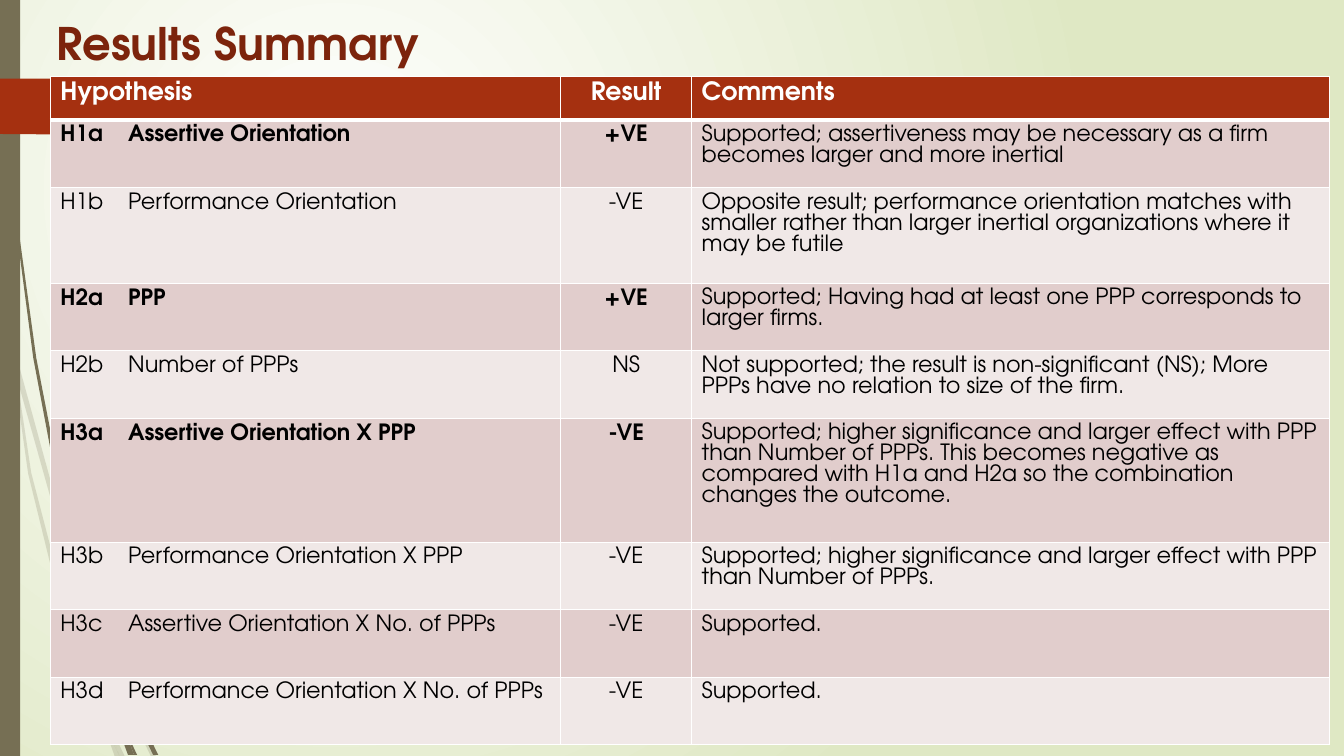
import pptx
import pptx.util
import pptx.dml.color
import pptx.enum.shapes
import pptx.enum.text
import pptx.oxml
from pptx.oxml.ns import qn

Inches, Pt = pptx.util.Inches, pptx.util.Pt
RGBColor = pptx.dml.color.RGBColor
PP_ALIGN = pptx.enum.text.PP_ALIGN

WHITE = RGBColor(0xFF, 0xFF, 0xFF)
BLACK = RGBColor(0, 0, 0)
PALE_GREEN = RGBColor(0xDF, 0xE8, 0xC4)
OLIVE = RGBColor(0x76, 0x6F, 0x54)
RUST = RGBColor(0xA5, 0x30, 0x10)
DARK_RUST = RGBColor(0x7C, 0x24, 0x0C)
ROSE = RGBColor(0xE1, 0xCD, 0xCC)
LIGHT_ROSE = RGBColor(0xF0, 0xE8, 0xE7)

# Outlines of the grass blades, in hundredths of an inch
FAINT_BLADES = [
    [(11, 350), (9, 322), (0, 282), (0, 299), (10, 344)],
    [(58, 522), (84, 599), (85, 586), (62, 520), (14, 345), (17, 376)],
    [(92, 607), (88, 596), (88, 610), (123, 694), (150, 751), (155, 751), (127, 692)],
    [(119, 751), (124, 751), (105, 711)],
    [(93, 683), (70, 619), (31, 469), (17, 376), (11, 350), (28, 470), (65, 621),
     (92, 693), (101, 714), (99, 707)],
    [(84, 599), (87, 646), (93, 683), (96, 692), (105, 711), (103, 706), (91, 646),
     (88, 610), (88, 608)],
    [(88, 584), (110, 462), (160, 349), (229, 245), (268, 198), (290, 175), (312, 154),
     (312, 153), (289, 175), (268, 197), (228, 244), (158, 348), (107, 461), (85, 584),
     (85, 586), (88, 596)],
    [(101, 714), (114, 751), (119, 751)],
    [(88, 608), (88, 610), (88, 596), (85, 586), (84, 599)],
    [(96, 692), (93, 683), (99, 707), (101, 714), (119, 751), (105, 711)],
]
SOLID_BLADES = [
    [(7, 110), (17, 233), (33, 355), (56, 477), (57, 481), (55, 457), (55, 453),
     (36, 355), (19, 232), (8, 109), (5, 48), (4, 0), (3, 0), (4, 48)],
    [(88, 592), (106, 645), (106, 633), (106, 631), (93, 590), (60, 472), (64, 505)],
    [(113, 649), (110, 641), (111, 656), (132, 708), (152, 749), (157, 749), (136, 706)],
    [(110, 691), (98, 657), (72, 556), (64, 505), (57, 477), (68, 557), (93, 659),
     (111, 708), (117, 722), (116, 717)],
    [(60, 472), (58, 453), (54, 349), (58, 245), (63, 193), (70, 141), (62, 193),
     (56, 245), (52, 349), (55, 449)],
    [(133, 749), (136, 749), (122, 719)],
    [(57, 477), (64, 505), (60, 472), (55, 449), (55, 453)],
    [(111, 633), (125, 552), (158, 476), (205, 406), (231, 374), (245, 359), (261, 344),
     (260, 344), (245, 358), (231, 373), (204, 405), (156, 474), (122, 551), (106, 631),
     (110, 641)],
    [(117, 722), (127, 749), (131, 749)],
    [(106, 645), (110, 691), (116, 706), (122, 719), (121, 716), (111, 656), (109, 651)],
    [(106, 645), (109, 651), (111, 656), (110, 641), (106, 631), (106, 633)],
    [(116, 706), (110, 691), (116, 717), (117, 722), (130, 749), (133, 749), (122, 719)],
]
TAG = [(173, 108), (148, 133), (146, 134), (136, 134), (0, 133), (0, 78), (146, 78),
       (148, 79), (173, 104)]

COLUMN_WIDTHS = [5.06, 1.3, 6.33]
ROW_HEIGHTS = [0.43, 0.67, 0.95, 0.67, 0.67, 1.23, 0.67, 0.67, 0.67]
HEADER = ("Hypothesis", "Result", "Comments")
# Label and name, result, comment, emphasised
HYPOTHESES = [
    ("H1a\tAssertive Orientation", "+VE",
     "Supported; assertiveness may be necessary as a firm becomes larger and more inertial", True),
    ("H1b\tPerformance Orientation", "-VE",
     "Opposite result; performance orientation matches with smaller rather than larger "
     "inertial organizations where it may be futile", False),
    ("H2a\tPPP", "+VE",
     "Supported; Having had at least one PPP corresponds to larger firms.", True),
    ("H2b\tNumber of PPPs", "NS",
     "Not supported; the result is non-significant (NS); More PPPs have no relation to "
     "size of the firm.", False),
    ("H3a\tAssertive Orientation X PPP", "-VE",
     "Supported; higher significance and larger effect with PPP than Number of PPPs. This "
     "becomes negative as compared with H1a and H2a so the combination changes the outcome.", True),
    ("H3b\tPerformance Orientation X PPP", "-VE",
     "Supported; higher significance and larger effect with PPP than Number of PPPs.", False),
    ("H3c\tAssertive Orientation X No. of PPPs", "-VE", "Supported.", False),
    ("H3d\tPerformance Orientation X No. of PPPs", "-VE", "Supported.", False),
]


class SlideBuilder:
    font_name = "TeX Gyre Adventor"

    def __init__(self, slide):
        self.slide = slide

    def background(self, inner, outer):
        fill = self.slide.background.fill
        fill.gradient()
        for stop, color in zip(fill.gradient_stops, (inner, outer)):
            stop.color.rgb = color
        gradient = self.slide._element.find(".//" + qn("a:gradFill"))
        gradient.replace(gradient.find(qn("a:lin")), pptx.oxml.parse_xml(
            f'<a:path xmlns:a="{gradient.nsmap["a"]}" path="circle">'
            '<a:fillToRect l="50000" t="50000" r="100000" b="100000"/></a:path>'))

    def paint(self, shape, color, opacity=100):
        shape.shadow.inherit = False
        shape.fill.solid()
        shape.fill.fore_color.rgb = color
        shape.line.fill.background()
        if opacity < 100:
            rgb = shape._element.spPr.find(qn("a:solidFill"))[0]
            rgb.append(rgb.makeelement(qn("a:alpha"), {"val": str(opacity * 1000)}))

    def outline(self, points, color, opacity=100):
        builder = self.slide.shapes.build_freeform(*points[0], scale=Inches(0.01))
        builder.add_line_segments(points[1:])
        self.paint(builder.convert_to_shape(), color, opacity)

    def rectangle(self, left, top, width, height, color):
        shape = self.slide.shapes.add_shape(
            pptx.enum.shapes.MSO_SHAPE.RECTANGLE,
            Inches(left), Inches(top), Inches(width), Inches(height))
        self.paint(shape, color)

    def style(self, paragraph, size, color, bold, alignment=PP_ALIGN.LEFT):
        paragraph.alignment = alignment
        font = paragraph.font
        font.name, font.size, font.bold = self.font_name, Pt(size), bold
        font.color.rgb = color

    def title(self, text, left, top, width, height):
        shape = self.slide.shapes.title
        shape.left, shape.top = Inches(left), Inches(top)
        shape.width, shape.height = Inches(width), Inches(height)
        shape.text_frame.text = text
        shape.text_frame.vertical_anchor = pptx.enum.text.MSO_ANCHOR.MIDDLE
        self.style(shape.text_frame.paragraphs[0], 32, DARK_RUST, True)

    def table(self, left, top, widths, heights):
        table = self.slide.shapes.add_table(
            len(heights), len(widths), Inches(left), Inches(top),
            Inches(sum(widths)), Inches(sum(heights))).table
        for column, width in zip(table.columns, widths):
            column.width = Inches(width)
        for row, height in zip(table.rows, heights):
            row.height = Inches(height)
        return table

    def cell(self, cell, text, fill, size, color, bold, alignment, bottom=1):
        properties = cell._tc.get_or_add_tcPr()
        for side, width in (("L", 1), ("R", 1), ("T", 1), ("B", bottom)):
            properties.append(pptx.oxml.parse_xml(
                f'<a:ln{side} xmlns:a="{properties.nsmap["a"]}" w="{Pt(width)}">'
                f'<a:solidFill><a:srgbClr val="{WHITE}"/></a:solidFill></a:ln{side}>'))
        cell.fill.solid()
        cell.fill.fore_color.rgb = fill
        cell.text = text
        paragraph = cell.text_frame.paragraphs[0]
        paragraph.line_spacing = Pt(size - 1)
        if "\t" in text:
            paragraph._p.get_or_add_pPr().append(pptx.oxml.parse_xml(
                f'<a:tabLst xmlns:a="{properties.nsmap["a"]}">'
                f'<a:tab pos="{Inches(0.67)}" algn="l"/></a:tabLst>'))
        self.style(paragraph, size, color, bold, alignment)


def main():
    presentation = pptx.Presentation()
    presentation.slide_width, presentation.slide_height = Inches(13.33), Inches(7.5)
    slide = presentation.slides.add_slide(presentation.slide_layouts[5])
    builder = SlideBuilder(slide)

    # Backdrop
    builder.background(WHITE, PALE_GREEN)
    for blades, opacity in ((FAINT_BLADES, 20), (SOLID_BLADES, 100)):
        for blade in blades:
            builder.outline(blade, OLIVE, opacity)
    builder.rectangle(0, 0, 0.2, 7.5, OLIVE)
    builder.outline(TAG, RUST)

    # Title
    builder.title("Results Summary", 0.46, 0.07, 9.75, 0.7)

    # Table of hypotheses
    table = builder.table(0.5, 0.76, COLUMN_WIDTHS, ROW_HEIGHTS)
    alignments = (PP_ALIGN.LEFT, PP_ALIGN.CENTER, PP_ALIGN.LEFT)
    for column, (text, alignment) in enumerate(zip(HEADER, alignments)):
        builder.cell(table.cell(0, column), text, RUST, 18, WHITE, True, alignment, bottom=3)
    for row, (*texts, emphasised) in enumerate(HYPOTHESES, start=1):
        fill = ROSE if row % 2 else LIGHT_ROSE
        for column, (text, alignment) in enumerate(zip(texts, alignments)):
            bold = emphasised and column < 2
            builder.cell(table.cell(row, column), text, fill, 16, BLACK, bold, alignment)

    presentation.save("out.pptx")


if __name__ == "__main__":
    main()
